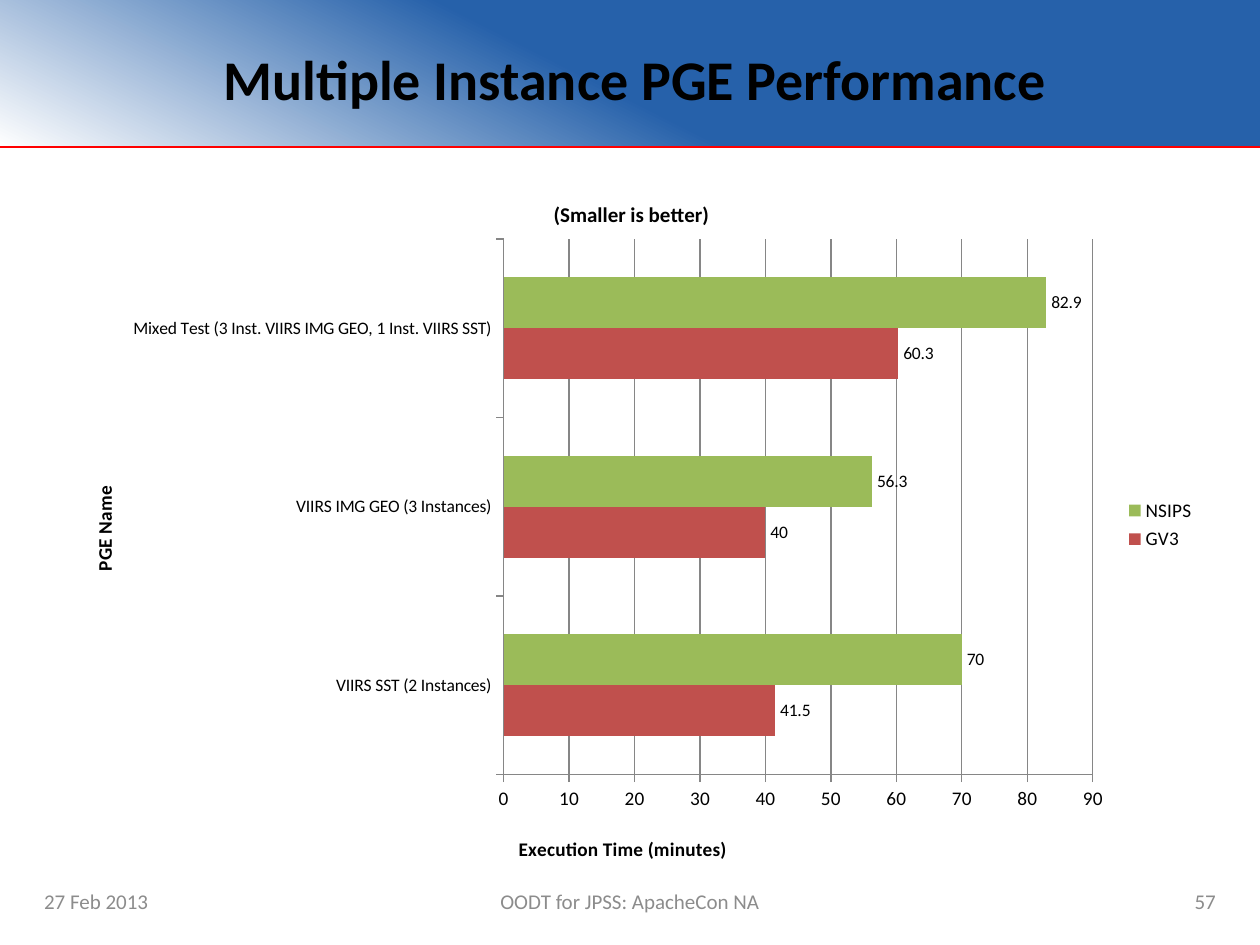
from lxml import etree
from pptx import Presentation
from pptx import util as u
from pptx.chart import data as chart_data
from pptx.dml import color
from pptx.enum import chart as charts, shapes, text
from pptx.oxml import ns

COLOURS = {
    "white": "FFFFFF", "blue": "2661AA", "red": "FF0000", "black": "000000",
    "grey": "8C8C8C", "axis": "868686", "GV3": "C0504D", "NSIPS": "9BBB59",
}
CATEGORIES = [
    "VIIRS SST (2 Instances)",
    "VIIRS IMG GEO (3 Instances)",
    "Mixed Test (3 Inst. VIIRS IMG GEO, 1 Inst. VIIRS SST)",
]
MINUTES = {"GV3": [41.5, 40, 60.3], "NSIPS": [70, 56.3, 82.9]}
TITLE_FORMAT = {"size": u.Pt(32), "bold": True}
FOOTER_FORMAT = {"size": u.Pt(12), "bold": False}


def rgb(name):
    return color.RGBColor.from_string(COLOURS[name])


def apply_format(target, values):
    for name, value in values.items():
        setattr(target, name, value)


def apply_font(font, values, colour="black"):
    apply_format(font, {"name": "Calibri", **values})
    font.color.rgb = rgb(colour)


def add_text(page, box, words, align, values, colour):
    frame = page.shapes.add_textbox(*map(u.Cm, box)).text_frame
    apply_format(frame, {"word_wrap": True, "vertical_anchor": text.MSO_ANCHOR.MIDDLE})
    para = frame.paragraphs[0]
    para.alignment = align
    span = para.add_run()
    span.text = words
    apply_font(span.font, values, colour)


def add_header(page, box):
    left, top, width, height = box
    band = page.shapes.add_shape(shapes.MSO_SHAPE.RECTANGLE, *map(u.Cm, box))
    band.shadow.inherit = False
    band.line.fill.background()
    band.fill.gradient()
    band.fill.gradient_angle = 63
    for stop, position, name in zip(band.fill.gradient_stops, (0, 0.47), ("white", "blue")):
        stop.position = position
        stop.color.rgb = rgb(name)
    bottom = top + height
    rule = page.shapes.add_connector(
        shapes.MSO_CONNECTOR.STRAIGHT, *map(u.Cm, (left, bottom, left + width, bottom)))
    rule.line.color.rgb = rgb("red")
    rule.line.width = u.Pt(1.25)
    etree.SubElement(rule._element.spPr, ns.qn("a:effectLst"))
    add_text(page, (left + 2.96, top + 0.36, 19.69, 2.41),
             "Multiple Instance PGE Performance", text.PP_ALIGN.CENTER, TITLE_FORMAT, "black")


def set_layout(element, index, fractions, inner=False):
    for old in element.findall(ns.qn("c:layout")):
        element.remove(old)
    layout = etree.Element(ns.qn("c:layout"))
    manual = etree.SubElement(layout, ns.qn("c:manualLayout"))
    settings = {"layoutTarget": "inner"} if inner else {}
    settings.update({"xMode": "edge", "yMode": "edge"})
    settings.update(zip("xywh", fractions))
    for name, value in settings.items():
        etree.SubElement(manual, ns.qn("c:" + name)).set("val", str(value))
    element.insert(index, layout)


def set_title(title, words, size, position):
    span = title.text_frame.paragraphs[0].add_run()
    span.text = words
    apply_font(span.font, {"size": u.Pt(size), "bold": True})
    set_layout(title._element, 1, position)


def add_performance_chart(page, box):
    table = chart_data.CategoryChartData()
    table.categories = CATEGORIES
    for name, values in MINUTES.items():
        table.add_series(name, values)
    chart = page.shapes.add_chart(
        charts.XL_CHART_TYPE.BAR_CLUSTERED, *map(u.Cm, box), table).chart
    apply_font(chart.font, {"size": u.Pt(10)})
    set_title(chart.chart_title, "(Smaller is better) ", 12, (0.43, 0.04))
    chart.chart_title.include_in_layout = True

    plot = chart.plots[0]
    apply_format(plot, {"gap_width": 150, "overlap": 0, "vary_by_categories": False})
    for series in plot.series:
        series.format.fill.solid()
        series.format.fill.fore_color.rgb = rgb(series.name)
        labels = series.data_labels
        apply_format(labels, {"show_value": True,
                              "position": charts.XL_LABEL_POSITION.OUTSIDE_END})
        apply_font(labels.font, {"size": u.Pt(10)})

    category, value = chart.category_axis, chart.value_axis
    apply_format(value, {"minimum_scale": 0, "maximum_scale": 90, "major_unit": 10,
                         "has_major_gridlines": True})
    value.major_gridlines.format.line.color.rgb = rgb("axis")
    for axis, size, words, position in (
            (category, 10, "PGE Name", (0.03, 0.44)),
            (value, 11, "Execution Time (minutes)", (0.4, 0.93))):
        apply_format(axis, {"major_tick_mark": charts.XL_TICK_MARK.OUTSIDE,
                            "minor_tick_mark": charts.XL_TICK_MARK.NONE})
        axis.format.line.color.rgb = rgb("axis")
        apply_font(axis.tick_labels.font, {"size": u.Pt(size)})
        set_title(axis.axis_title, words, 11, position)
    body = category.axis_title.text_frame._txBody.bodyPr
    body.set("rot", "-5400000")
    body.set("vert", "horz")

    chart.has_legend = True
    apply_format(chart.legend, {"position": charts.XL_LEGEND_POSITION.RIGHT,
                                "include_in_layout": False})
    apply_font(chart.legend.font, {"size": u.Pt(11)})
    plot_area = chart._chartSpace.find(".//" + ns.qn("c:plotArea"))
    set_layout(plot_area, 0, (0.39, 0.1, 0.51, 0.75), inner=True)


def add_footer(page, box):
    left, top, width, height = box
    side, middle = 5.92, 8.05
    for offset, span_width, words, align in (
            (0, side, "27 Feb 2013", text.PP_ALIGN.LEFT),
            ((width - middle) / 2, middle, "OODT for JPSS: ApacheCon NA", text.PP_ALIGN.CENTER),
            (width - side, side, "57", text.PP_ALIGN.RIGHT)):
        add_text(page, (left + offset, top, span_width, height),
                 words, align, FOOTER_FORMAT, "grey")


def main():
    deck = Presentation()
    apply_format(deck, {"slide_width": u.Cm(25.4), "slide_height": u.Cm(19.05)})
    page = deck.slides.add_slide(deck.slide_layouts[6])
    add_header(page, (0, 0, 25.4, 2.97))
    add_performance_chart(page, (1.07, 3.38, 23.29, 14.4))
    add_footer(page, (0.64, 17.65, 24.12, 1.02))
    deck.save("out.pptx")


if __name__ == "__main__":
    main()
